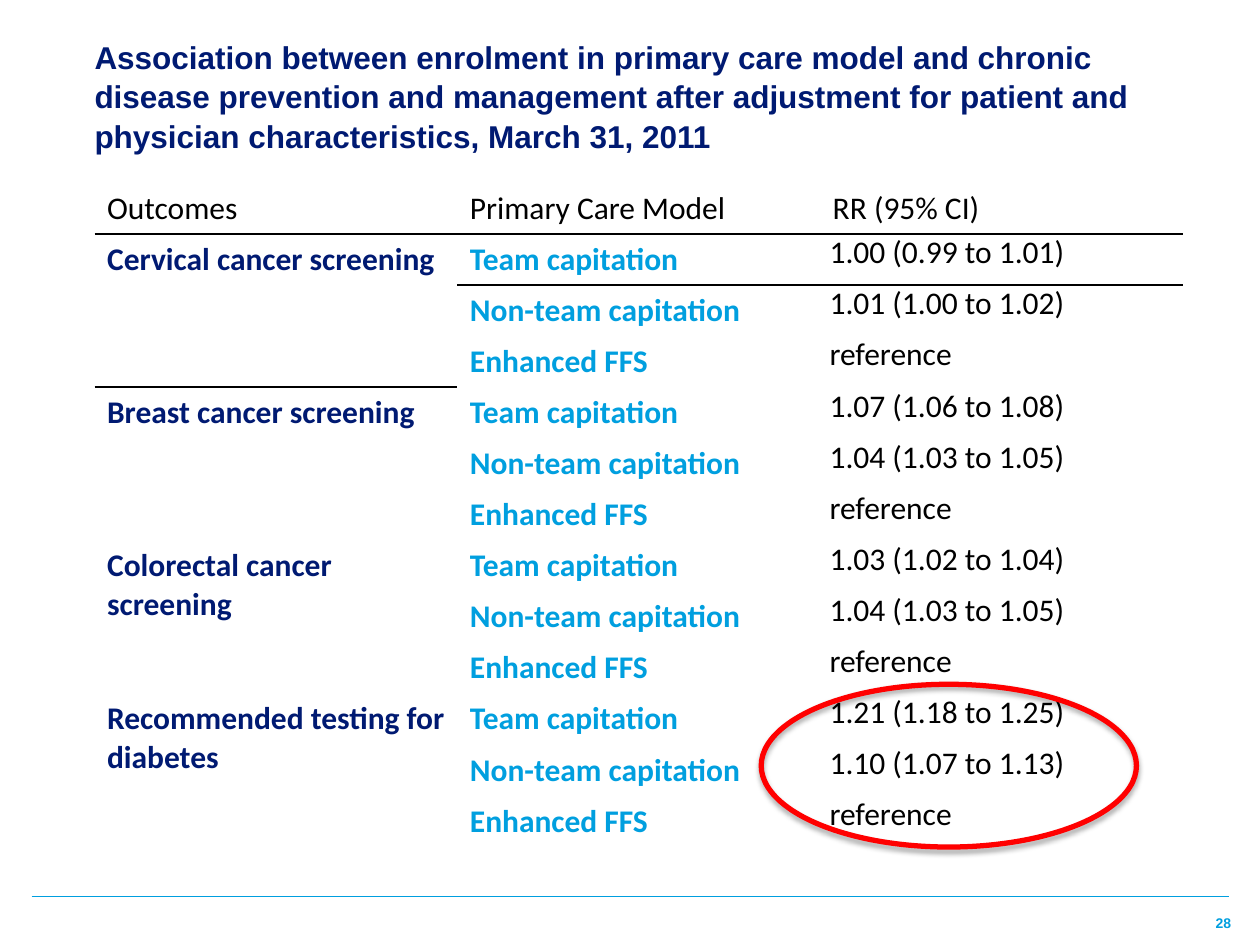
import pptx
import pptx.dml.color
import pptx.enum.shapes
import pptx.enum.text
import pptx.oxml
import pptx.oxml.ns
import pptx.util
from lxml import etree

Pt = pptx.util.Pt
PP_ALIGN = pptx.enum.text.PP_ALIGN
ANCHOR = pptx.enum.text.MSO_ANCHOR
COLORS = {"navy": "001A72", "blue": "009FDF", "black": "000000", "red": "FF0000"}
NAMESPACE = pptx.oxml.ns.nsdecls("a")
NO_STYLE_NO_GRID = "{2D5ABB26-0587-4C30-8999-92F81FD0307C}"


def rgb(name):
    return pptx.dml.color.RGBColor.from_string(COLORS[name])


def write(text_frame, text, color="black", font="Calibri", size=18, bold=False,
          align=PP_ALIGN.LEFT, spacing=None):
    paragraph = text_frame.paragraphs[0]
    paragraph.alignment = align
    paragraph.line_spacing = spacing
    run = paragraph.add_run()
    run.text = text
    run.font.name = font
    run.font.size = Pt(size)
    run.font.bold = bold
    run.font.color.rgb = rgb(color)


presentation = pptx.Presentation()
presentation.slide_width = Pt(720)
presentation.slide_height = Pt(540)
slide = presentation.slides.add_slide(presentation.slide_layouts[5])

# Footer rule and page number
rule = slide.shapes.add_connector(pptx.enum.shapes.MSO_CONNECTOR.STRAIGHT,
                                  Pt(18), Pt(512), Pt(702), Pt(512))
rule.line.color.rgb = rgb("blue")
rule.line.width = Pt(0.25)
etree.SubElement(rule._element.spPr, pptx.oxml.ns.qn("a:effectLst"))

page_number = slide.shapes.add_textbox(Pt(676), Pt(522.7), Pt(27.5), Pt(21))
frame = page_number.text_frame
frame.word_wrap = True
frame.margin_left = Pt(7.2)
frame.margin_top = frame.margin_right = frame.margin_bottom = 0
write(frame, "28", color="blue", font="Arial", size=8, bold=True, align=PP_ALIGN.RIGHT)

# Title
title = slide.shapes.title
title.left, title.top, title.width, title.height = Pt(54), Pt(19.5), Pt(622), Pt(69)
frame = title.text_frame
frame.word_wrap = True
frame.auto_size = pptx.enum.text.MSO_AUTO_SIZE.NONE
frame.vertical_anchor = ANCHOR.BOTTOM
frame.margin_left = frame.margin_right = frame.margin_bottom = 0
frame.margin_top = Pt(3.6)
write(frame, "Association between enrolment in primary care model and chronic disease "
      "prevention and management after adjustment for patient and physician "
      "characteristics, March 31, 2011",
      color="navy", font="Arial", bold=True, spacing=1.05)

# Results table
headers = ["Outcomes", "Primary Care Model", "RR (95% CI)"]
models = ["Team capitation", "Non-team capitation", "Enhanced FFS"]
outcomes = {
    "Cervical cancer screening": ["1.00 (0.99 to 1.01)", "1.01 (1.00 to 1.02)", "reference"],
    "Breast cancer screening": ["1.07 (1.06 to 1.08)", "1.04 (1.03 to 1.05)", "reference"],
    "Colorectal cancer screening": ["1.03 (1.02 to 1.04)", "1.04 (1.03 to 1.05)", "reference"],
    "Recommended testing for diabetes": ["1.21 (1.18 to 1.25)", "1.10 (1.07 to 1.13)",
                                         "reference"],
}
row_count = 1 + len(outcomes) * len(models)
row_height = 29.2
table = slide.shapes.add_table(row_count, len(headers), Pt(54), Pt(104.4),
                               Pt(622), Pt(row_count * row_height)).table
table.first_row = table.horz_banding = False
table._tbl.tblPr.find(pptx.oxml.ns.qn("a:tableStyleId")).text = NO_STYLE_NO_GRID
for row in table.rows:
    row.height = Pt(row_height)
for cell in table.iter_cells():
    cell.fill.background()

for column, header in enumerate(headers):
    write(table.cell(0, column).text_frame, header)

for group, (outcome, ratios) in enumerate(outcomes.items()):
    first = 1 + group * len(models)
    outcome_cell = table.cell(first, 0)
    outcome_cell.merge(table.cell(first + len(models) - 1, 0))
    write(outcome_cell.text_frame, outcome, color="navy", bold=True)
    for row, (model, ratio) in enumerate(zip(models, ratios), first):
        write(table.cell(row, 1).text_frame, model, color="blue", bold=True)
        ratio_cell = table.cell(row, 2)
        ratio_cell.margin_left = ratio_cell.margin_right = Pt(5.4)
        ratio_cell.margin_top = ratio_cell.margin_bottom = 0
        write(ratio_cell.text_frame, ratio)

# Rules under the header, the first model row and the first outcome
for row, column in [(0, 0), (0, 1), (0, 2), (1, 0), (1, 1), (1, 2), (3, 0)]:
    border = pptx.oxml.parse_xml(
        f'<a:lnB {NAMESPACE} w="{Pt(1)}"><a:solidFill>'
        f'<a:srgbClr val="{COLORS["black"]}"/></a:solidFill></a:lnB>')
    table.cell(row, column)._tc.get_or_add_tcPr().insert(0, border)

# Ring around the diabetes results
ring = slide.shapes.add_shape(pptx.enum.shapes.MSO_SHAPE.OVAL,
                              Pt(435), Pt(391), Pt(649.4 - 435), Pt(93))
ring.fill.background()
ring.line.color.rgb = rgb("red")
ring.line.width = Pt(3)
ring._element.spPr.append(pptx.oxml.parse_xml(
    f'<a:effectLst {NAMESPACE}><a:outerShdw blurRad="{Pt(3.1)}" dist="{Pt(1.8)}" '
    f'dir="5400000" rotWithShape="0"><a:srgbClr val="{COLORS["black"]}">'
    '<a:alpha val="35000"/></a:srgbClr></a:outerShdw></a:effectLst>'))

presentation.save("out.pptx")
